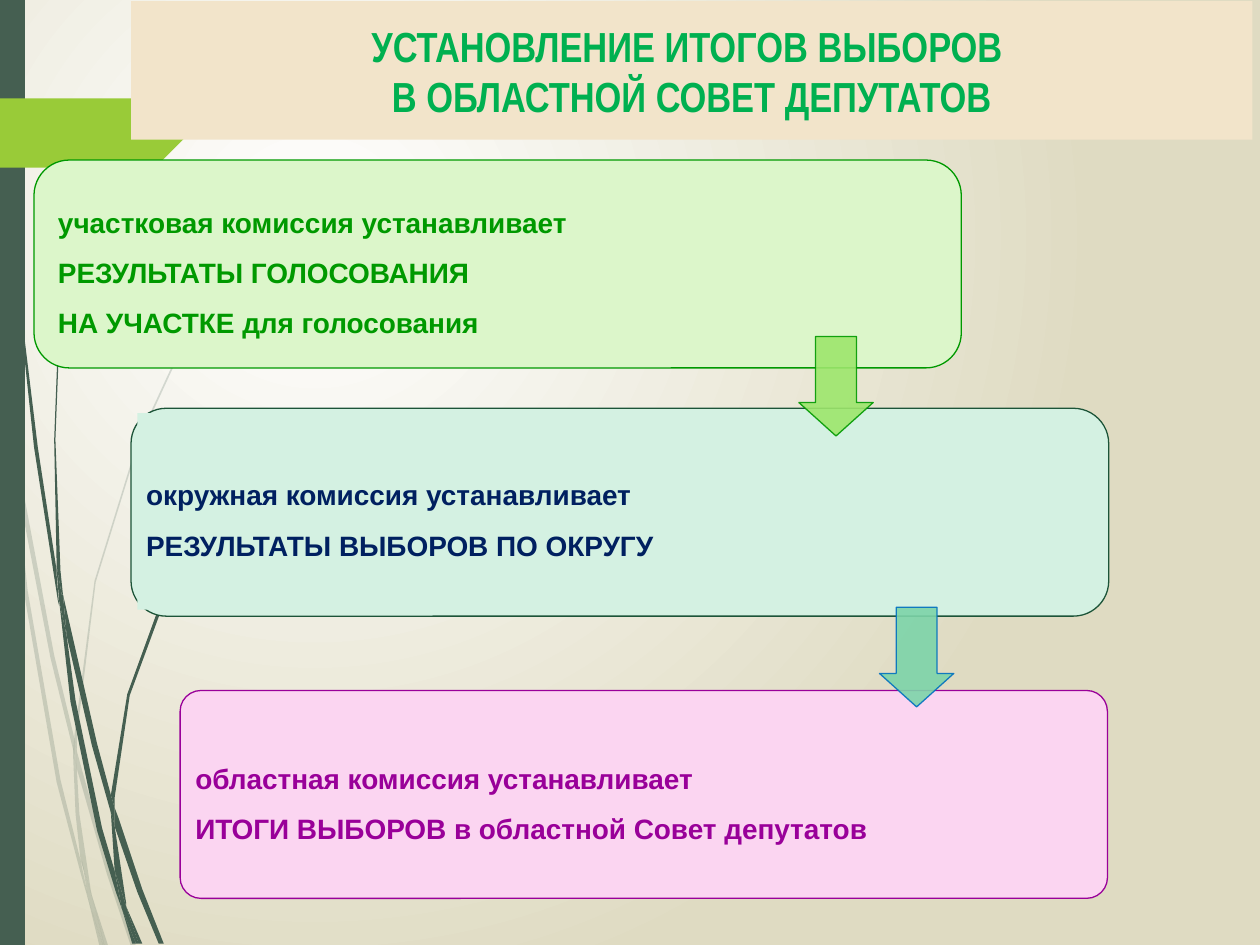
from copy import deepcopy
from lxml import etree
from pptx import Presentation
from pptx.dml.color import RGBColor
from pptx.enum import shapes, text
from pptx.oxml.ns import qn
from pptx.util import Inches, Pt

THEME = {
    "dark": "455F51", "accent": "99CB38", "bg": ("FFFFFF", "DFDBC2"),
    "title": {"fill": "F2E4CA", "font": {"name": "Arial Narrow", "size": Pt(24), "bold": True}, "color": "00B050"},
    "body": {"name": "Arial", "size": Pt(16), "bold": True},
    "precinct": {"fill": "DCF6CA", "line": "009900", "color": "009900"},
    "district": {"fill": "D4F1E2", "line": "1C5438", "color": "002060"},
    "region": {"fill": "FBD5F1", "line": "990099", "color": "990099"},
    "arrows": (("9DE66C", "009900"), ("7DD4A9", "0070C0")),
}

prs = Presentation()
prs.slide_width, prs.slide_height = Inches(10), Inches(7.5)
CELL = prs.slide_width // 1000
slide = prs.slides.add_slide(prs.slide_layouts[6])


def paint(sp, fill, line=None, alpha=100):
    sp.shadow.inherit = False
    sp.fill.solid()
    sp.fill.fore_color.rgb = RGBColor.from_string(fill)
    if line:
        sp.line.color.rgb = RGBColor.from_string(line)
        sp.line.width = Pt(0.75)
    else:
        sp.line.fill.background()
    if alpha < 100:
        for clr in sp._element.spPr.iter(qn("a:srgbClr")):
            etree.SubElement(clr, qn("a:alpha"), val=str(alpha * 1000))


def write(at, words, color, font, frame, para):
    sp = slide.shapes.add_textbox(*(v * CELL for v in at))
    tf = sp.text_frame
    tf.text = words
    p = tf.paragraphs[0]
    for obj, values in ((tf, frame), (p, para)):
        for key, value in values.items():
            setattr(obj, key, value)
    for r in p.runs:
        for key, value in font.items():
            setattr(r.font, key, value)
        r.font.color.rgb = RGBColor.from_string(color)
    for br in p._p.findall(qn("a:br")):
        br.append(deepcopy(p.runs[0]._r.rPr))
    return sp


bg = slide.background.fill
bg.gradient()
for stop, color in zip(bg.gradient_stops, THEME["bg"]):
    stop.color.rgb = RGBColor.from_string(color)
for stop, position in zip(bg.gradient_stops, (0, 1)):
    stop.position = position
lin = next(slide._element.iter(qn("a:lin")))
radial = etree.Element(qn("a:path"), {"path": "circle"})
etree.SubElement(radial, qn("a:fillToRect"), l="50000", t="50000", r="100000", b="100000")
lin.getparent().replace(lin, radial)

pale_wisps = [
    [(8, 350), (6, 322), (0, 282), (0, 299), (7, 344)],
    [(40, 522), (59, 599), (59, 586), (43, 520), (10, 345), (12, 376)],
    [(64, 607), (61, 596), (61, 610), (85, 694), (104, 751), (108, 751), (88, 692)],
    [(83, 751), (86, 751), (73, 711)],
    [(64, 683), (48, 619), (22, 469), (12, 376), (8, 350), (19, 470), (45, 621), (64, 693), (70, 714), (69, 707)],
    [(58, 599), (60, 646), (64, 683), (67, 692), (73, 711), (72, 706), (63, 646), (61, 610), (61, 608)],
    [(61, 584), (76, 462), (111, 349), (159, 245), (187, 198), (201, 175), (217, 154), (217, 153),
     (201, 175), (186, 197), (158, 244), (110, 348), (75, 461), (59, 584), (59, 586), (61, 596)],
    [(70, 714), (79, 751), (82, 751)],
    [(61, 608), (61, 610), (61, 596), (59, 586), (58, 599)],
    [(67, 692), (65, 683), (69, 707), (70, 714), (82, 751), (83, 751), (73, 711)],
]
dark_wisps = [
    [(5, 110), (14, 233), (27, 355), (46, 477), (47, 481), (45, 457), (45, 453), (30, 355), (15, 232),
     (6, 109), (4, 48), (3, 0), (2, 0), (3, 48)],
    [(73, 592), (88, 645), (88, 633), (88, 631), (77, 590), (50, 472), (53, 505)],
    [(94, 649), (91, 641), (91, 656), (109, 708), (126, 749), (130, 749), (113, 706)],
    [(91, 691), (81, 657), (60, 556), (53, 505), (47, 477), (56, 557), (77, 659), (92, 708), (97, 722), (96, 717)],
    [(50, 472), (48, 453), (44, 349), (48, 245), (52, 193), (58, 141), (51, 193), (47, 245), (43, 349),
     (45, 449), (49, 472)],
    [(110, 749), (113, 749), (100, 719)],
    [(47, 477), (53, 505), (50, 472), (49, 472), (45, 449), (45, 453)],
    [(91, 633), (103, 552), (131, 476), (169, 406), (191, 374), (203, 359), (216, 344), (215, 344),
     (203, 358), (191, 373), (168, 405), (129, 474), (101, 551), (88, 631), (91, 641)],
    [(97, 722), (105, 749), (108, 749)],
    [(88, 645), (91, 691), (96, 706), (100, 719), (100, 716), (91, 656), (90, 651)],
    [(88, 645), (90, 651), (91, 656), (91, 641), (88, 631), (88, 633)],
    [(96, 706), (91, 691), (96, 717), (97, 722), (108, 749), (110, 749), (100, 719)],
]
rail = [(0, 0), (20, 0), (20, 750), (0, 750)]
tab = [(149, 107), (124, 132), (121, 133), (0, 133), (0, 78), (121, 78), (124, 79), (149, 104)]
outlines = [(o, THEME["dark"], 20) for o in pale_wisps] + [(o, THEME["dark"], 100) for o in dark_wisps]
outlines += [(rail, THEME["dark"], 100), (tab, THEME["accent"], 100)]
for points, color, alpha in outlines:
    fb = slide.shapes.build_freeform(*points[0], scale=CELL)
    fb.add_line_segments(points[1:])
    paint(fb.convert_to_shape(), color, alpha=alpha)

middle = {"word_wrap": True, "vertical_anchor": text.MSO_ANCHOR.MIDDLE}
title = write((104, 1, 890, 110), "УСТАНОВЛЕНИЕ ИТОГОВ ВЫБОРОВ \vВ ОБЛАСТНОЙ СОВЕТ ДЕПУТАТОВ",
              THEME["title"]["color"], THEME["title"]["font"], middle, {"alignment": text.PP_ALIGN.CENTER})
paint(title, THEME["title"]["fill"])

margins = {f"margin_{side}": Inches(0.07) for side in ("left", "top", "right", "bottom")}
steps = [
    ("precinct", (27, 127, 736, 165), 0.17, (39, 135, 551, 149),
     "участковая комиссия устанавливает РЕЗУЛЬТАТЫ ГОЛОСОВАНИЯ \vНА УЧАСТКЕ для голосования"),
    ("district", (104, 324, 776, 165), 0.17, (109, 328, 584, 156),
     "окружная комиссия устанавливает \vРЕЗУЛЬТАТЫ ВЫБОРОВ ПО ОКРУГУ"),
    ("region", (143, 548, 736, 165), 0.1, (148, 553, 554, 156),
     "областная комиссия устанавливает \vИТОГИ ВЫБОРОВ в областной Совет депутатов"),
]
for name, card_at, corner, text_at, words in steps:
    look = THEME[name]
    card = slide.shapes.add_shape(shapes.MSO_SHAPE.ROUNDED_RECTANGLE, *(v * CELL for v in card_at))
    card.adjustments[0] = corner
    paint(card, look["fill"], look["line"])
    label = write(text_at, words, look["color"], THEME["body"], {**middle, **margins},
                  {"line_spacing": 1.5, "space_after": Pt(5.6)})
    if name == "district":
        paint(label, look["fill"])

for (left, top), (fill, line) in zip(((634, 267), (698, 482)), THEME["arrows"]):
    arrow = slide.shapes.add_shape(shapes.MSO_SHAPE.DOWN_ARROW, *(v * CELL for v in (left, top, 59, 79)))
    arrow.adjustments[0], arrow.adjustments[1] = 0.55, 0.45
    paint(arrow, fill, line, 90)

prs.save("out.pptx")
